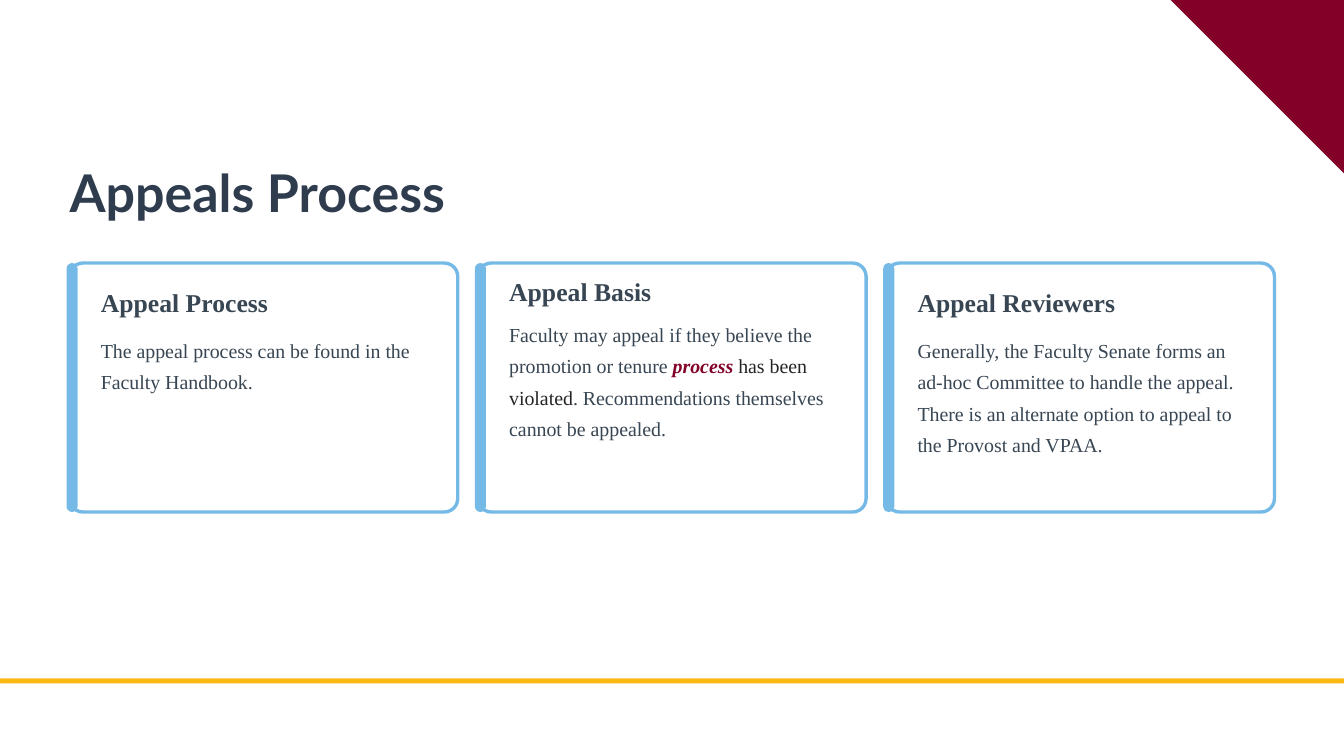
from pptx import Presentation
from pptx import util as u
from pptx.dml.color import RGBColor
from pptx.enum import shapes, text

WIDTH, HEIGHT = 13.33, 7.5
MAROON, GOLD, SKY, WHITE = "830028", "FDB913", "75BAE6", "FFFFFF"
NAVY, SLATE, INK = "2E3C4E", "384653", "242426"
SERIF = "Times New Roman"

CARD_LEFT, CARD_TOP, CARD_STEP = 0.69, 2.61, 4.05
CARD_WIDTH, CARD_HEIGHT = 3.85, 2.47

# Each card: heading, heading offset, body offset, body spans (text, colour, emphasis)
CARDS = [
    ("Appeal Process", 0.22, 0.67, [
        ("The appeal process can be found in the Faculty Handbook.", SLATE, False)]),
    ("Appeal Basis", 0.11, 0.51, [
        ("Faculty may appeal if they believe the promotion or tenure ", SLATE, False),
        ("process ", MAROON, True),
        ("has been violated", INK, False),
        (". Recommendations themselves cannot be appealed.", SLATE, False)]),
    ("Appeal Reviewers", 0.22, 0.67, [
        ("Generally, the Faculty Senate forms an ad-hoc Committee to handle the appeal. "
         "There is an alternate option to appeal to the Provost and VPAA.", SLATE, False)]),
]


def color(value):
    return RGBColor.from_string(value)


def inches(*lengths):
    return [u.Inches(length) for length in lengths]


def add_block(slide, kind, box, fill, line=None):
    block = slide.shapes.add_shape(kind, *inches(*box))
    block.shadow.inherit = False
    block.fill.solid()
    block.fill.fore_color.rgb = color(fill)
    if line:
        block.line.color.rgb = color(line)
        block.line.width = u.Pt(2.4)
    else:
        block.line.fill.background()
    return block


def write(shape, spans, font, size, spacing, bold=False):
    """Fill a shape with one left-aligned paragraph of (text, colour, emphasis) spans."""
    frame = shape.text_frame
    frame.margin_left = frame.margin_top = frame.margin_right = frame.margin_bottom = 0
    frame.word_wrap = True
    frame.auto_size = text.MSO_AUTO_SIZE.NONE
    frame.vertical_anchor = text.MSO_ANCHOR.TOP
    para = frame.paragraphs[0]
    para.alignment = text.PP_ALIGN.LEFT
    para.line_spacing = u.Pt(spacing)
    para.font.name, para.font.size, para.font.bold = font, u.Pt(size), bold
    for words, shade, emphasis in spans:
        span = para.add_run()
        span.text = words
        span.font.color.rgb = color(shade)
        if emphasis:
            span.font.bold = span.font.italic = True


def add_decoration(slide):
    side = 1.72
    corner = add_block(slide, shapes.MSO_SHAPE.RIGHT_TRIANGLE,
                       (WIDTH - side, 0, side, side), MAROON)
    corner.rotation = 180
    add_block(slide, shapes.MSO_SHAPE.RECTANGLE, (0, 6.73, WIDTH, 0.05), GOLD)


def add_title(slide, box):
    title = slide.shapes.title
    title.left, title.top, title.width, title.height = inches(*box)
    write(title, [("Appeals Process", NAVY, False)], "Lato", 37.1, 46.7, bold=True)


def add_card(slide, box, heading, heading_offset, body_offset, spans):
    left, top, width, height = box
    rounded = shapes.MSO_SHAPE.ROUNDED_RECTANGLE
    panel = add_block(slide, rounded, box, WHITE, SKY)
    panel.adjustments[0] = 0.054
    accent = add_block(slide, rounded, (left - 0.03, top, 0.11, height), SKY)
    accent.adjustments[0] = 0.5

    text_left, text_width = left + 0.31, width - 0.53
    heading_box = slide.shapes.add_textbox(
        *inches(text_left, top + heading_offset, text_width, 0.32))
    write(heading_box, [(heading, SLATE, False)], SERIF, 18.3, 23.3, bold=True)
    body_box = slide.shapes.add_textbox(
        *inches(text_left, top + body_offset, text_width, 1.58))
    write(body_box, spans, SERIF, 14.2, 22.5)


def main():
    deck = Presentation()
    deck.slide_width, deck.slide_height = inches(WIDTH, HEIGHT)
    slide = deck.slides.add_slide(deck.slide_layouts[5])
    add_decoration(slide)
    add_title(slide, (CARD_LEFT, 1.56, 5.2, 0.65))
    for column, card in enumerate(CARDS):
        left = CARD_LEFT + column * CARD_STEP
        add_card(slide, (left, CARD_TOP, CARD_WIDTH, CARD_HEIGHT), *card)
    deck.save("out.pptx")


if __name__ == "__main__":
    main()
